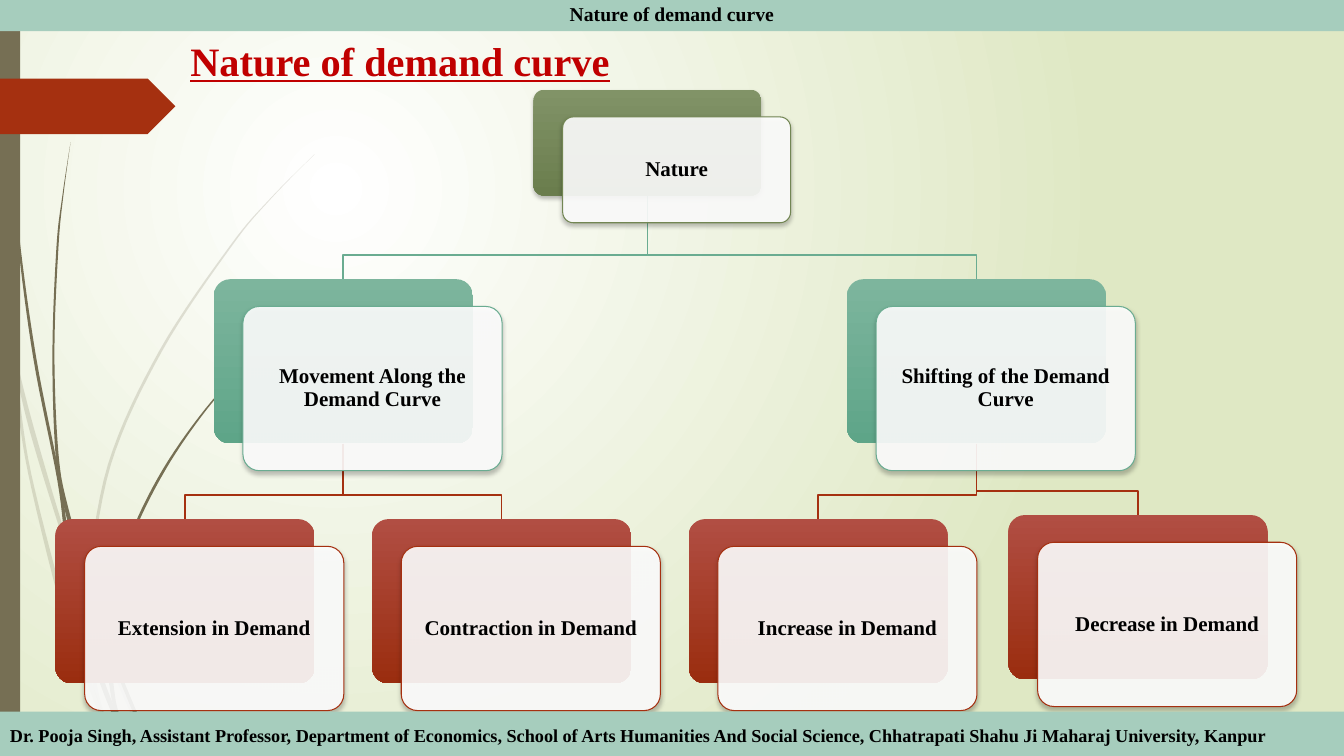
from dataclasses import dataclass

from lxml import etree
from pptx import Presentation, util as u
from pptx.dml.color import RGBColor
from pptx.enum import shapes, text
from pptx.oxml.ns import qn

WIDTH, HEIGHT = 13.33, 7.5
FONT = "Times New Roman"
BLACK = RGBColor(0x00, 0x00, 0x00)
WHITE = RGBColor(0xFF, 0xFF, 0xFF)
PALE_GREEN = RGBColor(0xDF, 0xE8, 0xC4)
BROWN = RGBColor(0x76, 0x6F, 0x54)
RUST = RGBColor(0xA5, 0x30, 0x10)
TITLE_RED = RGBColor(0xC0, 0x00, 0x00)
BAND = RGBColor(0xA6, 0xCD, 0xBD)
OLIVE = RGBColor(0x72, 0x86, 0x53)
TEAL = RGBColor(0x6A, 0xAC, 0x91)
OLIVE_TOP, OLIVE_BOTTOM = RGBColor(0x81, 0x93, 0x67), RGBColor(0x6A, 0x7D, 0x4D)
TEAL_TOP, TEAL_BOTTOM = RGBColor(0x7D, 0xB5, 0x9D), RGBColor(0x5E, 0xA5, 0x88)
RUST_TOP, RUST_BOTTOM = RGBColor(0xB1, 0x4E, 0x43), RGBColor(0x9A, 0x2D, 0x0F)

# Tree grid: four columns of leaves, parents midway between their children
FIRST_COLUMN, COLUMN_PITCH = 0.55, 3.14
CARD_SHIFT_X, CARD_SHIFT_Y = 0.29, 0.27
BEND_ABOVE_CHILD = 0.24


@dataclass(frozen=True)
class Level:
    top: float
    width: float
    height: float
    line: RGBColor
    shades: tuple[RGBColor, RGBColor]
    back_shadow: bool = False


@dataclass(frozen=True)
class Node:
    label: str
    level: Level
    column: float
    parent: "Node | None" = None
    lift: float = 0

    @property
    def left(self) -> float:
        return FIRST_COLUMN + self.column * COLUMN_PITCH

    @property
    def top(self) -> float:
        return self.level.top - self.lift

    @property
    def center(self) -> float:
        return self.left + self.level.width / 2


@dataclass(frozen=True)
class Strand:
    opacity: int
    rows: list[tuple[float, float, float]]  # y, left edge, right edge


ROOT = Level(0.89, 2.26, 1.05, OLIVE, (OLIVE_TOP, OLIVE_BOTTOM), True)
BRANCH = Level(2.77, 2.57, 1.63, TEAL, (TEAL_TOP, TEAL_BOTTOM))
LEAF = Level(5.15, 2.57, 1.63, RUST, (RUST_TOP, RUST_BOTTOM))

nature = Node("Nature", ROOT, 1.51)
movement = Node("Movement Along the Demand Curve", BRANCH, 0.5, nature)
shifting = Node("Shifting of the Demand Curve", BRANCH, 2.5, nature)
NODES = [
    nature,
    movement,
    Node("Extension in Demand", LEAF, 0, movement),
    Node("Contraction in Demand", LEAF, 1, movement),
    shifting,
    Node("Increase in Demand", LEAF, 2, shifting),
    Node("Decrease in Demand", LEAF, 3.01, shifting, lift=0.04),
]

STRANDS = [
    Strand(20, [(2.82, 0, 0), (3.22, 0.05, 0.09), (3.76, 0.17, 0.21), (4.33, 0.31, 0.36),
                (5.21, 0.58, 0.62), (5.98, 0.84, 0.88), (6.93, 1.23, 1.27), (7.5, 1.5, 1.55)]),
    Strand(20, [(3.5, 0.11, 0.11), (3.76, 0.14, 0.17), (4.7, 0.28, 0.31), (6.2, 0.65, 0.7),
                (6.85, 0.89, 0.94), (7.5, 1.14, 1.19)]),
    Strand(20, [(5.98, 0.84, 0.86), (6.46, 0.87, 0.91), (6.83, 0.93, 0.97), (7.11, 1.03, 1.05),
                (7.5, 1.19, 1.24)]),
    Strand(20, [(1.53, 3.12, 3.12), (1.97, 2.68, 2.69), (2.44, 2.28, 2.3), (3.48, 1.58, 1.61),
                (4.61, 1.07, 1.1), (5.84, 0.85, 0.88), (5.98, 0.85, 0.88)]),
    Strand(100, [(0, 0.03, 0.04), (1.1, 0.07, 0.08), (2.33, 0.17, 0.19), (3.55, 0.33, 0.36),
                 (4.77, 0.57, 0.6), (5.57, 0.68, 0.72), (6.58, 0.93, 0.98), (7.08, 1.11, 1.16),
                 (7.5, 1.3, 1.33)]),
    Strand(100, [(1.41, 0.7, 0.7), (1.93, 0.62, 0.63), (2.45, 0.56, 0.58), (3.49, 0.52, 0.54),
                 (4.5, 0.55, 0.58), (5.05, 0.64, 0.68), (5.91, 0.88, 0.93), (6.4, 1.05, 1.09),
                 (7.07, 1.32, 1.36), (7.5, 1.52, 1.57)]),
    Strand(100, [(3.44, 2.6, 2.61), (4.05, 2.04, 2.06), (4.75, 1.56, 1.59), (5.51, 1.22, 1.25),
                 (6.31, 1.06, 1.11), (6.9, 1.1, 1.14), (7.19, 1.2, 1.22)]),
]


def smooth(rows: list, steps: int = 8) -> list:
    """Catmull-Rom curve through the rows."""
    padded = [rows[0], *rows, rows[-1]]
    curve = []
    for a, b, c, d in zip(padded, padded[1:], padded[2:], padded[3:]):
        for t in (step / steps for step in range(steps)):
            curve.append(tuple(
                q + 0.5 * t * (r - p + t * (2 * p - 5 * q + 4 * r - s + t * (3 * (q - r) + s - p)))
                for p, q, r, s in zip(a, b, c, d)))
    return curve + [rows[-1]]


def add_outline(slide, points: list, closed: bool):
    start, *others = [(u.Inches(x), u.Inches(y)) for x, y in points]
    builder = slide.shapes.build_freeform(*start)
    builder.add_line_segments(others, close=closed)
    shape = builder.convert_to_shape()
    shape.shadow.inherit = False
    return shape


def add_box(slide, kind, left: float, top: float, width: float, height: float):
    shape = slide.shapes.add_shape(kind, *map(u.Inches, (left, top, width, height)))
    shape.shadow.inherit = False
    shape.line.fill.background()
    return shape


def paint(shape, color: RGBColor, opacity: int = 100) -> None:
    shape.fill.solid()
    shape.fill.fore_color.rgb = color
    if opacity < 100:
        solid = shape.element.spPr.find(qn("a:solidFill"))
        etree.SubElement(solid[0], qn("a:alpha"), val=str(opacity * 1000))


def paint_gradient(fill, colors: tuple[RGBColor, RGBColor]) -> None:
    fill.gradient()
    for stop, color in zip(fill.gradient_stops, colors):
        stop.color.rgb = color


def add_shadow(shape) -> None:
    effects = shape.element.spPr.find(qn("a:effectLst"))
    shadow = etree.SubElement(effects, qn("a:outerShdw"), blurRad=str(u.Pt(3)), dist=str(u.Pt(2)),
                              dir="5400000", algn="ctr", rotWithShape="0")
    color = etree.SubElement(shadow, qn("a:srgbClr"), val="000000")
    etree.SubElement(color, qn("a:alpha"), val="25000")


def write(shape, words: str, size: float, align, color: RGBColor = BLACK,
          anchor=text.MSO_ANCHOR.MIDDLE):
    frame = shape.text_frame
    frame.word_wrap = True
    frame.vertical_anchor = anchor
    frame.text = words
    paragraph = frame.paragraphs[0]
    paragraph.alignment = align
    font = paragraph.runs[0].font
    font.name, font.size, font.bold = FONT, u.Pt(size), True
    font.color.rgb = color
    return paragraph


def add_link(slide, parent: Node, child: Node) -> None:
    bend = child.top - BEND_ABOVE_CHILD
    link = add_outline(slide, [(parent.center, parent.top + parent.level.height),
                               (parent.center, bend), (child.center, bend),
                               (child.center, child.top)], closed=False)
    link.fill.background()
    link.line.color.rgb = child.level.line
    link.line.width = u.Pt(1.25)


def add_node(slide, node: Node) -> None:
    level = node.level
    kind = shapes.MSO_SHAPE.ROUNDED_RECTANGLE
    back = add_box(slide, kind, node.left, node.top, level.width, level.height)
    paint_gradient(back.fill, level.shades)
    back.fill.gradient_angle = 270
    card = add_box(slide, kind, node.left + CARD_SHIFT_X, node.top + CARD_SHIFT_Y,
                   level.width, level.height)
    paint(card, WHITE, 90)
    card.line.color.rgb = level.line
    card.line.width = u.Pt(0.75)
    add_shadow(card)
    if level.back_shadow:
        add_shadow(back)
    back.adjustments[0] = card.adjustments[0] = 0.1
    frame = card.text_frame
    frame.margin_left = frame.margin_right = frame.margin_top = frame.margin_bottom = u.Inches(0.06)
    write(card, node.label, 15, text.PP_ALIGN.CENTER).line_spacing = 0.9


def main() -> None:
    presentation = Presentation()
    presentation.slide_width, presentation.slide_height = u.Inches(WIDTH), u.Inches(HEIGHT)
    slide = presentation.slides.add_slide(presentation.slide_layouts[6])

    # Background glow, centred in the upper left quarter
    paint_gradient(slide.background.fill, (WHITE, PALE_GREEN))
    linear = slide.element.find(".//" + qn("a:lin"))
    glow = etree.Element(qn("a:path"), path="circle")
    etree.SubElement(glow, qn("a:fillToRect"), l="50000", t="50000", r="100000", b="100000")
    linear.getparent().replace(linear, glow)

    # Grass strands, side bar and arrow tab
    for strand in STRANDS:
        curve = smooth(strand.rows)
        edges = [(left, y) for y, left, _ in curve] + [(right, y) for y, _, right in curve[::-1]]
        blade = add_outline(slide, edges, closed=True)
        paint(blade, BROWN, strand.opacity)
        blade.line.fill.background()
    paint(add_box(slide, shapes.MSO_SHAPE.RECTANGLE, 0, 0, 0.2, HEIGHT), BROWN)
    tab = add_box(slide, shapes.MSO_SHAPE.PENTAGON, 0, 0.78, 1.74, 0.55)
    paint(tab, RUST)

    # Title
    title = slide.shapes.add_textbox(*map(u.Inches, (1.79, 0.31, 6.09, 0.67)))
    heading = write(title, "Nature of demand curve", 28.8, text.PP_ALIGN.LEFT, TITLE_RED,
                    text.MSO_ANCHOR.TOP)
    heading.runs[0].font.underline = True

    # Tree
    for node in NODES:
        if node.parent:
            add_link(slide, node.parent, node)
    for node in NODES:
        add_node(slide, node)

    # Header and footer bands
    for top, height, words, size, align in (
        (-0.03, 0.34, "Nature of demand curve", 14, text.PP_ALIGN.CENTER),
        (7.06, 0.46, "Dr. Pooja Singh, Assistant Professor, Department of Economics, School of Arts "
         "Humanities And Social Science, Chhatrapati Shahu Ji Maharaj University, Kanpur", 13,
         text.PP_ALIGN.LEFT),
    ):
        band = add_box(slide, shapes.MSO_SHAPE.RECTANGLE, 0, top, WIDTH, height)
        paint(band, BAND)
        write(band, words, size, align)

    presentation.save("out.pptx")


if __name__ == "__main__":
    main()
